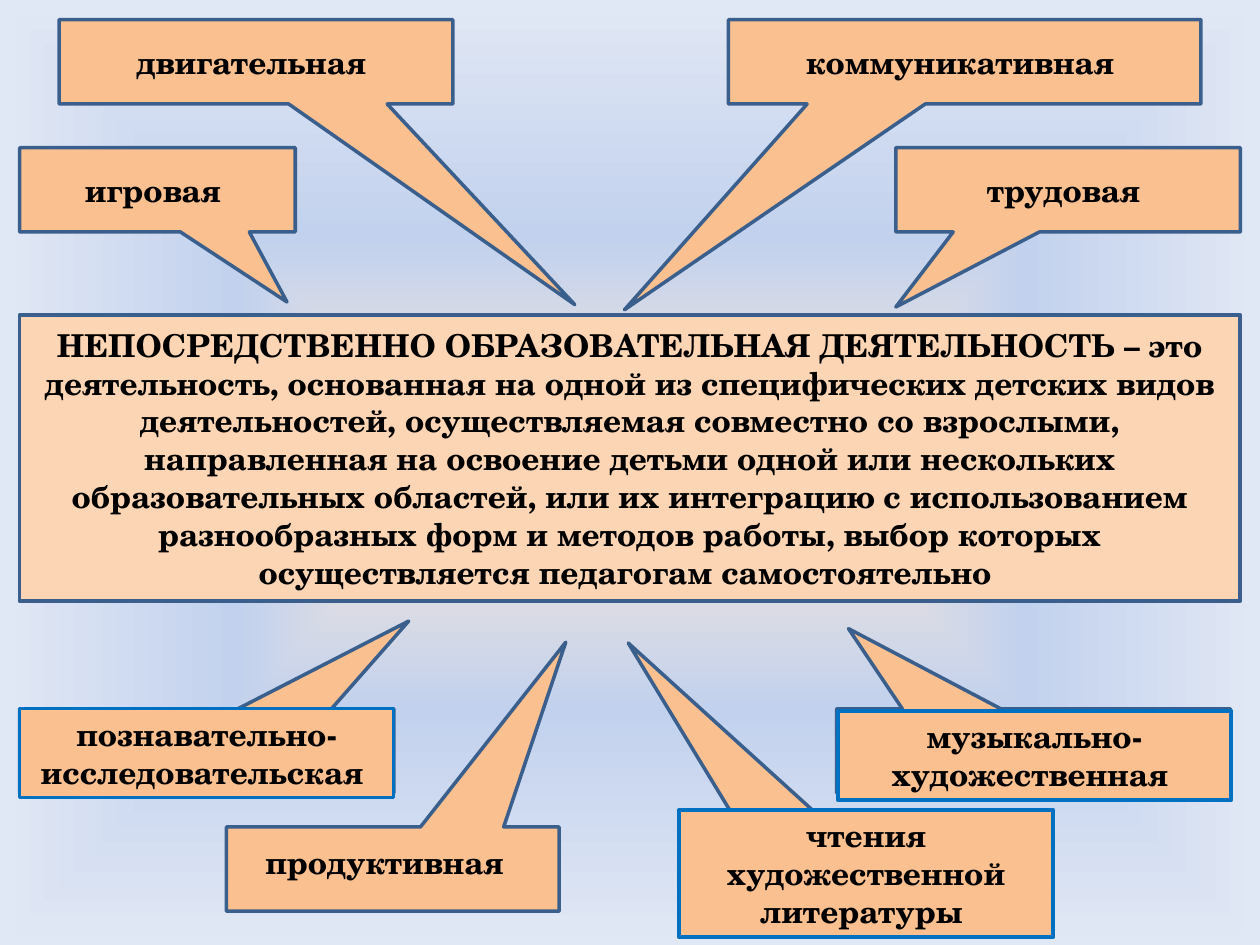
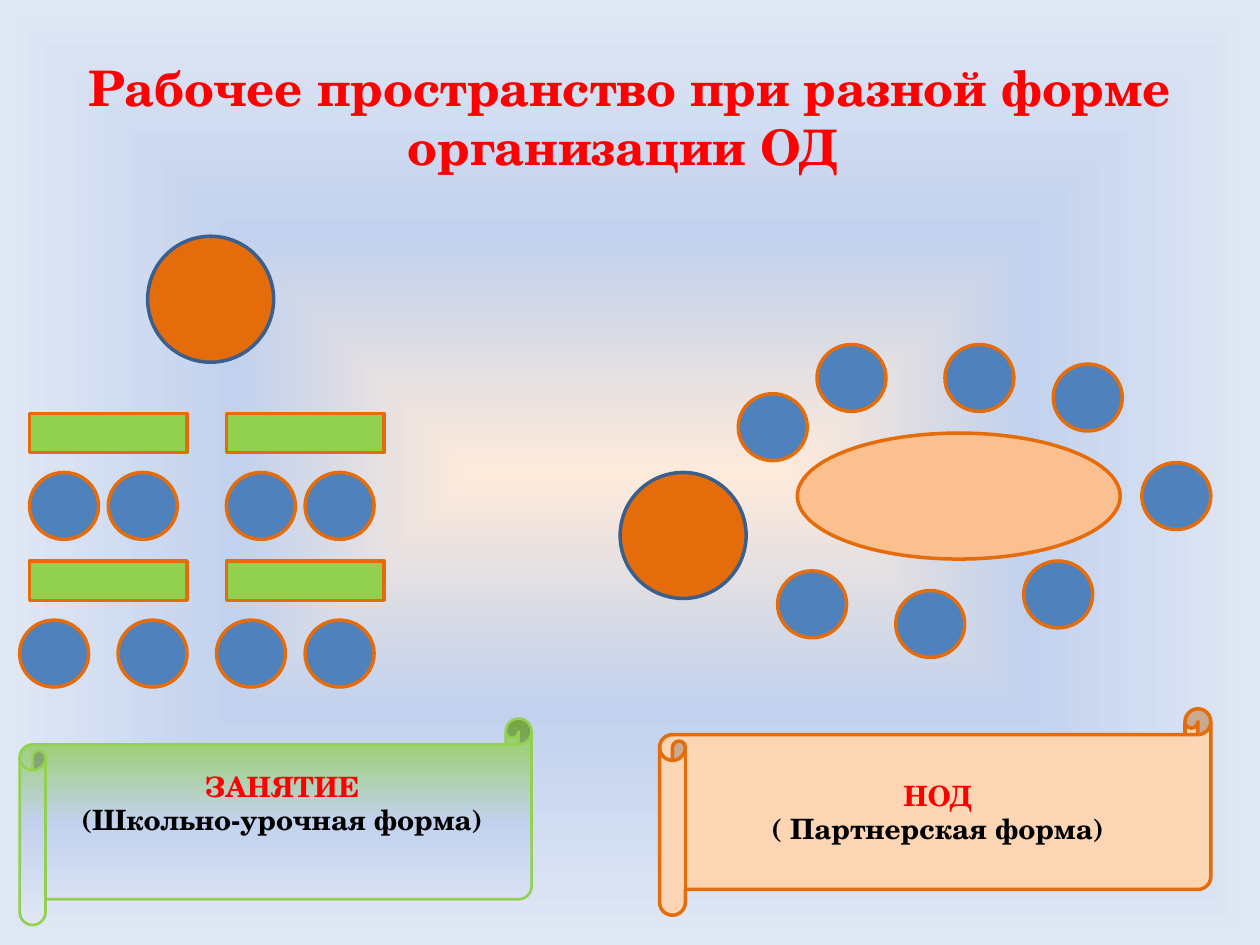
import itertools

import pptx
import pptx.dml.color
import pptx.enum.shapes
import pptx.enum.text
import pptx.oxml
import pptx.oxml.ns
import pptx.util

Pt = pptx.util.Pt
SHAPE = pptx.enum.shapes.MSO_SHAPE
ANCHOR = pptx.enum.text.MSO_ANCHOR

COLORS = {
    "ink": "000000",
    "accent": "FF0000",
    "peach": "FCD5B5",
    "apricot": "FAC090",
    "orange": "E46C0A",
    "steel": "3A5F8C",
    "azure": "0070C0",
    "blue": "4F81BD",
    "green": "92D050",
    "cream": "FDEADA",
    "haze": "C2D1ED",
    "mist": "E1E8F5",
}


def rgb(name):
    return pptx.dml.color.RGBColor.from_string(COLORS[name])


def set_gradient(grad_fill, first, direction):
    """Fade from the first colour through haze to mist."""
    stops = "".join(
        f'<a:gs pos="{position}"><a:srgbClr val="{COLORS[name]}"/></a:gs>'
        for position, name in ((0, first), (50000, "haze"), (100000, "mist")))
    namespace = pptx.oxml.ns.nsdecls("a")
    new_fill = pptx.oxml.parse_xml(
        f'<a:gradFill {namespace} rotWithShape="1">'
        f"<a:gsLst>{stops}</a:gsLst>{direction}</a:gradFill>")
    grad_fill.getparent().replace(grad_fill, new_fill)


class Deck:
    font = "TeX Gyre Schola"
    downward = '<a:lin ang="5400000" scaled="0"/>'
    from_centre = ('<a:path path="shape"><a:fillToRect l="50000" t="50000" '
                   'r="50000" b="50000"/></a:path>')

    def __init__(self):
        self.prs = pptx.Presentation()
        self.prs.slide_width, self.prs.slide_height = Pt(720), Pt(540)
        self.slide = None

    def new_slide(self):
        self.slide = self.prs.slides.add_slide(self.prs.slide_layouts[6])
        self.slide.background.fill.gradient()
        grad_fill = self.slide.element.xpath("./p:cSld/p:bg//a:gradFill")[0]
        set_gradient(grad_fill, "cream", self.from_centre)

    def set_lines(self, shape, lines, size, anchor):
        """Fill a shape with centred bold lines of (text, colour)."""
        frame = shape.text_frame
        frame.word_wrap = True
        frame.vertical_anchor = anchor
        frame.text = "\n".join(text for text, _ in lines)
        for paragraph, (_, color) in zip(frame.paragraphs, lines):
            paragraph.alignment = pptx.enum.text.PP_ALIGN.CENTER
            paragraph.font.name = self.font
            paragraph.font.size = Pt(size)
            paragraph.font.bold = True
            paragraph.font.color.rgb = rgb(color)

    def text(self, box, text, size=18, color="ink", anchor=ANCHOR.TOP):
        textbox = self.slide.shapes.add_textbox(*map(Pt, box))
        self.set_lines(textbox, [(text, color)], size, anchor)

    def shape(self, kind, box, fill, line, weight=2, lines=(), size=18,
              anchor=ANCHOR.MIDDLE):
        shape = self.slide.shapes.add_shape(kind, *map(Pt, box))
        shape.shadow.inherit = False
        shape.fill.solid()
        shape.fill.fore_color.rgb = rgb(fill)
        shape.line.color.rgb = rgb(line)
        shape.line.width = Pt(weight)
        if lines:
            self.set_lines(shape, lines, size, anchor)
        return shape

    def callout(self, box, tip, text="", rotation=0):
        lines = [(text, "ink")] if text else ()
        callout = self.shape(SHAPE.RECTANGULAR_CALLOUT, box, "apricot",
                             "steel", lines=lines)
        callout.adjustments[0], callout.adjustments[1] = tip
        callout.rotation = rotation

    def label(self, box, text, weight=2.25):
        self.shape(SHAPE.RECTANGLE, box, "apricot", "azure", weight,
                   [(text, "ink")], anchor=ANCHOR.TOP)

    def desk(self, left, top):
        self.shape(SHAPE.RECTANGLE, (left, top, 90, 22.5), "green", "orange")

    def child(self, left, top):
        self.shape(SHAPE.OVAL, (left, top, 39.4, 38.2), "blue", "orange")

    def teacher(self, left, top):
        self.shape(SHAPE.OVAL, (left, top, 72, 72), "orange", "steel")

    def scroll(self, box, fill, line, weight, name, form):
        return self.shape(SHAPE.HORIZONTAL_SCROLL, box, fill, line, weight,
                          [(name, "accent"), (form, "ink")], size=16)


def build_activities(deck):
    deck.new_slide()

    # Definition
    definition = (
        "НЕПОСРЕДСТВЕННО ОБРАЗОВАТЕЛЬНАЯ ДЕЯТЕЛЬНОСТЬ – это деятельность, "
        "основанная на одной из специфических детских видов деятельностей, "
        "осуществляемая совместно со взрослыми, направленная на освоение "
        "детьми одной или нескольких образовательных областей, или их "
        "интеграцию с использованием разнообразных форм и методов работы, "
        "выбор которых осуществляется педагогам самостоятельно ")
    deck.shape(SHAPE.RECTANGLE, (11.25, 180, 697.5, 163.5), "peach", "steel",
               lines=[(definition, "ink")])

    # Activities above the definition
    for left, top, width, tip, activity in (
            (33.75, 11.25, 225, (0.81, 2.88), "двигательная "),
            (11.25, 84.4, 157.5, (0.47, 1.33), "игровая "),
            (416.25, 11.25, 270, (-0.72, 2.94), "коммуникативная "),
            (511.9, 84.4, 196.9, (-0.5, 1.39), "трудовая ")):
        deck.callout((left, top, width, 48.2), tip, activity)

    # Callouts below, turned to point up
    for left, top, width, tip in (
            (11.25, 405, 213.75, (-0.54, 1.54)),
            (478.1, 405, 225, (0.47, 1.45)),
            (388.1, 472.5, 208.1, (0.64, 2.68)),
            (129.4, 472.5, 190.1, (-0.52, 2.69))):
        deck.callout((left, top, width, 48.2), tip, rotation=180)

    # Activities below the definition
    deck.label((11.25, 405, 213.75, 50.9),
               "познавательно-исследовательская ", weight=1.5)
    deck.label((478.7, 406.2, 225, 50.9), "музыкально-художественная ")
    deck.text((129.4, 478.1, 185.8, 29), "продуктивная ")
    deck.label((388.1, 462.9, 213.75, 72.7),
               "чтения художественной литературы ")


def build_workspace(deck):
    deck.new_slide()
    deck.text((36, 21.6, 648, 90),
              "Рабочее пространство при разной форме организации ОД ",
              size=28, color="accent", anchor=ANCHOR.MIDDLE)

    # Classroom: desks in rows, children behind them
    for top, left in itertools.product((236.25, 320.6), (16.9, 129.4)):
        deck.desk(left, top)
    for top, lefts in ((270, (16.9, 61.9, 129.4, 174.4)),
                       (354.4, (11.25, 67.5, 123.75, 174.4))):
        for left in lefts:
            deck.child(left, top)
    deck.teacher(84.4, 135)

    # Partnership: children and teacher around one table
    for left, top in ((421.9, 225), (466.9, 196.9), (540, 196.9),
                      (601.9, 208.1), (652.5, 264.4), (585, 320.6),
                      (511.9, 337.5), (444.4, 326.25)):
        deck.child(left, top)
    deck.shape(SHAPE.OVAL, (455.6, 247.5, 184.5, 72), "apricot", "orange")
    deck.teacher(354.4, 270)

    # Names of the two forms
    lesson = deck.scroll((11.25, 410.6, 292.5, 118), "green", "green", 1.5,
                         "ЗАНЯТИЕ", "(Школьно-урочная форма)")
    lesson.fill.gradient()
    set_gradient(lesson.element.xpath("./p:spPr/a:gradFill")[0], "green",
                 deck.downward)
    lesson.text_frame.margin_bottom = Pt(25.2)
    deck.scroll((376.9, 405, 315, 118), "peach", "orange", 2,
                "НОД ", "( Партнерская форма) ")


def main():
    deck = Deck()
    build_activities(deck)
    build_workspace(deck)
    deck.prs.save("out.pptx")


if __name__ == "__main__":
    main()
